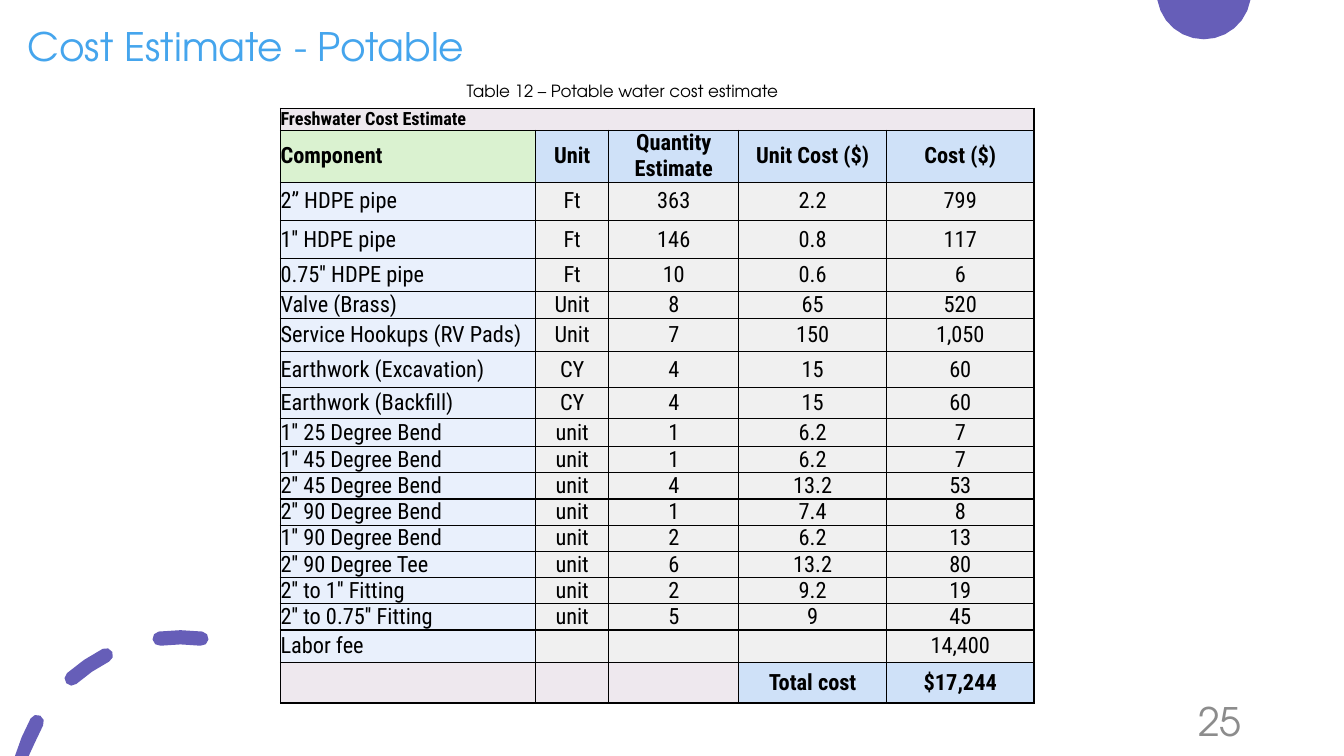
import math
import pptx
import pptx.util
import pptx.dml.color
import pptx.enum.text
import pptx.oxml
import pptx.oxml.ns

Cm, Pt = pptx.util.Cm, pptx.util.Pt
RGB = pptx.dml.color.RGBColor
Align, Anchor = pptx.enum.text.PP_ALIGN, pptx.enum.text.MSO_ANCHOR

PURPLE = RGB(0x66, 0x5E, 0xB8)
SKY = RGB(0x45, 0xA5, 0xED)
GRAY = RGB(0x8C, 0x8C, 0x8C)
BLACK = RGB(0, 0, 0)
MAUVE = RGB(0xEE, 0xE8, 0xEE)
GREEN = RGB(0xDA, 0xF2, 0xD0)
BLUE = RGB(0xCF, 0xE1, 0xF8)
PALE = RGB(0xE9, 0xF0, 0xFC)
LIGHT = RGB(0xF0, 0xF0, 0xF0)
SANS, NARROW = "TeX Gyre Adventor", "Roboto Condensed"
WIDE, HIGH = 33.87, 19.05

deck = pptx.Presentation()
deck.slide_width, deck.slide_height = Cm(WIDE), Cm(HIGH)
slide = deck.slides.add_slide(deck.slide_layouts[6])


def arc(x, y, radius, start, end, steps):
    """Points on an arc, clipped to the slide; degrees clockwise from the top."""
    turns = [math.radians(start + (end - start) * i / steps)
             for i in range(steps + 1)]
    return [(Cm(x + radius * math.sin(t)),
             Cm(min(max(y - radius * math.cos(t), 0), HIGH))) for t in turns]


def style(para, font, size, color, bold=False, align=Align.LEFT):
    para.alignment = align
    for run in para.runs:
        run.font.name, run.font.size = font, Pt(size)
        run.font.color.rgb, run.font.bold = color, bold


# Half disc at the top; three round-ended dashes along one curve
disc = arc(30.34, -0.2, 1.19, 99.7, 260.3, 12)
midx, midy, ring, half = 4.55, 20.2, 4.14, 0.18
dashes = []
for start, end in [(-75, -61), (-41.5, -27), (-7.3, 7.3)]:
    (headx, heady), (tailx, taily) = [
        (midx + ring * math.sin(math.radians(turn)),
         midy - ring * math.cos(math.radians(turn))) for turn in (end, start)]
    dash = arc(midx, midy, ring + half, start, end, 2)
    dash += arc(headx, heady, half, end, end + 180, 4)[1:-1]
    dash += arc(midx, midy, ring - half, end, start, 2)
    if taily < HIGH:
        dash += arc(tailx, taily, half, start + 180, start + 360, 4)[1:-1]
    dashes.append(dash)
for outlines in ([disc], dashes):
    pen = slide.shapes.build_freeform(*outlines[0][0], scale=1.0)
    for i, points in enumerate(outlines):
        if i:
            pen.move_to(*points[0])
        pen.add_line_segments(points[1:], close=True)
    shape = pen.convert_to_shape()
    shape.shadow.inherit = False
    shape.fill.solid()
    shape.fill.fore_color.rgb = PURPLE
    shape.line.fill.background()

# Page number
# Cost table
rows = [
    ("Freshwater Cost Estimate", "", "", "", ""),
    ("Component", "Unit", "Quantity Estimate", "Unit Cost ($)", "Cost ($)"),
    ("2’’ HDPE pipe", "Ft", "363", "2.2", "799"),
    ("1'' HDPE pipe", "Ft", "146", "0.8", "117"),
    ("0.75'' HDPE pipe", "Ft", "10", "0.6", "6"),
    ("Valve (Brass)", "Unit", "8", "65", "520"),
    ("Service Hookups (RV Pads)", "Unit", "7", "150", "1,050"),
    ("Earthwork (Excavation)", "CY", "4", "15", "60"),
    ("Earthwork (Backfill)", "CY", "4", "15", "60"),
    ("1'' 25 Degree Bend", "unit", "1", "6.2", "7"),
    ("1'' 45 Degree Bend", "unit", "1", "6.2", "7"),
    ("2'' 45 Degree Bend", "unit", "4", "13.2", "53"),
    ("2'' 90 Degree Bend", "unit", "1", "7.4", "8"),
    ("1'' 90 Degree Bend", "unit", "2", "6.2", "13"),
    ("2'' 90 Degree Tee", "unit", "6", "13.2", "80"),
    ("2'' to 1'' Fitting", "unit", "2", "9.2", "19"),
    ("2'' to 0.75'' Fitting", "unit", "5", "9", "45"),
    ("Labor fee", "", "", "", "14,400"),
    ("", "", "", "Total cost", "$17,244"),
]
widths = [6.43, 1.84, 3.28, 3.72, 3.72]
heights = [0.55, 1.31, 0.96, 0.96, 0.84, 0.67, 0.83, 0.92, 0.77, 0.71]
heights += [0.66] * 7 + [0.82, 1.02]
last = len(rows) - 1
grid = slide.shapes.add_table(len(rows), len(widths), Cm(7.07), Cm(2.73),
                              Cm(sum(widths)), Cm(sum(heights))).table
for col, width in zip(grid.columns, widths):
    col.width = Cm(width)
for row, height in zip(grid.rows, heights):
    row.height = Cm(height)
grid.cell(0, 0).merge(grid.cell(0, 4))

for r, row in enumerate(rows):
    for c, text in enumerate(row):
        cell = grid.cell(r, c)
        cell.margin_left = cell.margin_right = 0
        cell.margin_top = cell.margin_bottom = 0
        cell.vertical_anchor = Anchor.MIDDLE
        for side in "LRTB":
            cell._tc.get_or_add_tcPr().append(pptx.oxml.parse_xml(
                f'<a:ln{side} {pptx.oxml.ns.nsdecls("a")} w="12700"><a:solidFill>'
                f'<a:srgbClr val="{BLACK}"/></a:solidFill></a:ln{side}>'))
        if r == 0 or (r == last and c < 3):
            color = MAUVE
        elif r in (1, last):
            color = BLUE if c else GREEN
        else:
            color = LIGHT if c else PALE
        cell.fill.solid()
        cell.fill.fore_color.rgb = color
        if text:
            cell.text_frame.text = text
            style(cell.text_frame.paragraphs[0], NARROW, 16 if r else 13, BLACK,
                  r in (0, 1, last), Align.CENTER if c else Align.LEFT)

# Page number, caption and title
for text, box, size, color, align, anchor, space in [
    ("25", (23.92, 17.65, 7.62, 1.02), 28, GRAY, Align.RIGHT, Anchor.MIDDLE, 1.0),
    ("Table 12\u00a0– Potable water cost estimate", (11.51, 1.9, 16.94, 0.76),
     12, BLACK, Align.LEFT, Anchor.TOP, 1.0),
    ("Cost Estimate - Potable", (0.44, -0.61, 29.21, 3.68),
     28, SKY, Align.LEFT, Anchor.MIDDLE, 0.9),
]:
    frame = slide.shapes.add_textbox(*map(Cm, box)).text_frame
    frame.word_wrap = True
    frame.vertical_anchor = anchor
    frame.text = text
    frame.paragraphs[0].line_spacing = space
    style(frame.paragraphs[0], SANS, size, color, align=align)

deck.save("out.pptx")
